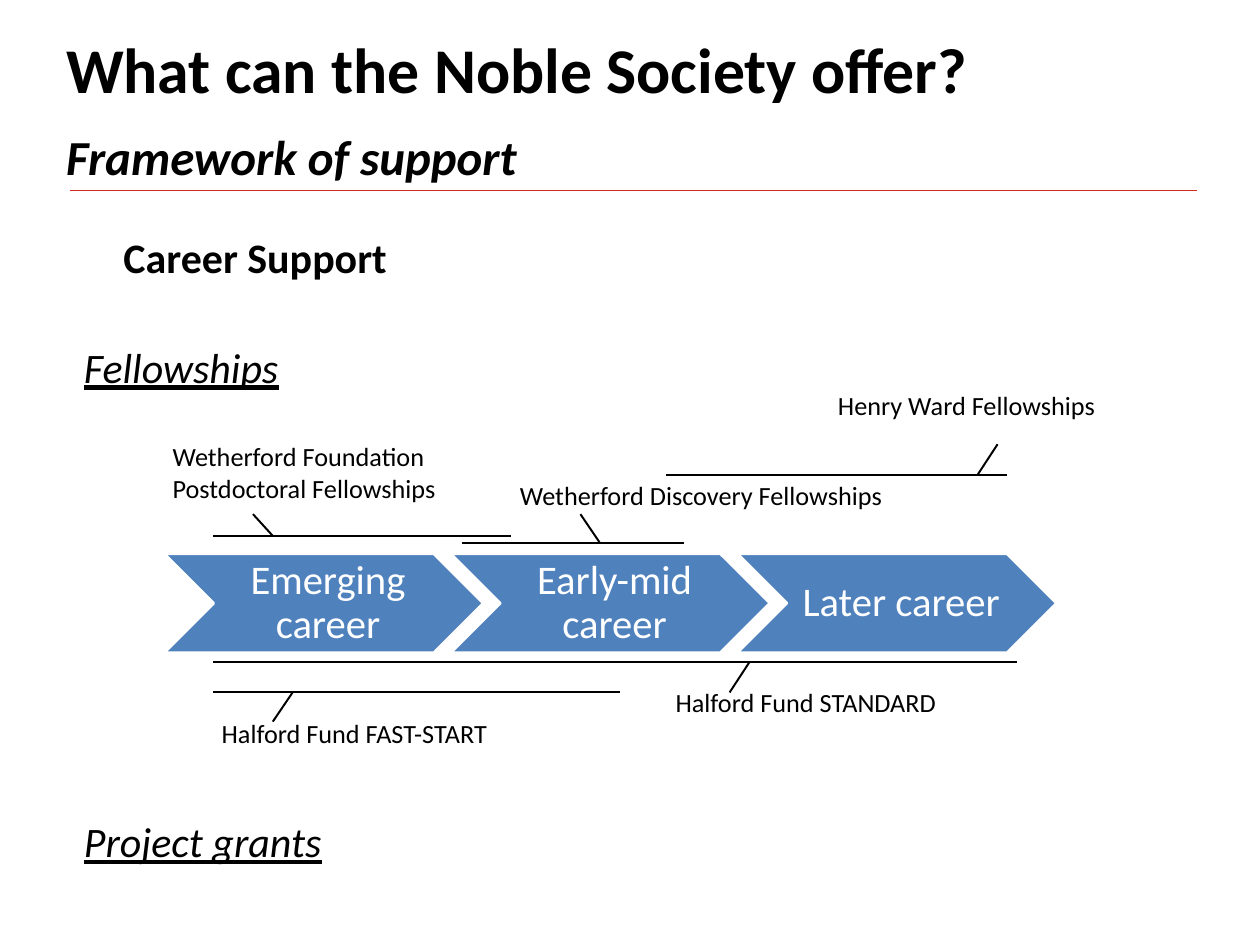
from dataclasses import dataclass

from lxml import etree
from pptx import Presentation
from pptx.dml.color import RGBColor
from pptx.enum.shapes import MSO_CONNECTOR, MSO_SHAPE
from pptx.enum.text import MSO_ANCHOR, PP_ALIGN
from pptx.oxml.ns import qn
from pptx.util import Pt

STRAIGHT = MSO_CONNECTOR.STRAIGHT
CHEVRON = MSO_SHAPE.CHEVRON
TOP, MIDDLE, BOTTOM = MSO_ANCHOR.TOP, MSO_ANCHOR.MIDDLE, MSO_ANCHOR.BOTTOM
LEFT, CENTER = PP_ALIGN.LEFT, PP_ALIGN.CENTER


@dataclass(frozen=True)
class Theme:
    """Colours, font and type sizes of the slide."""
    font: str = "Calibri"
    ink: RGBColor = RGBColor(0, 0, 0)
    white: RGBColor = RGBColor(255, 255, 255)
    blue: RGBColor = RGBColor(0x4F, 0x81, 0xBD)
    red: RGBColor = RGBColor(0xD5, 0x2B, 0x1E)
    title: float = 48.6
    subtitle: float = 37.3
    heading: float = 32
    stage: float = 31
    label: float = 20


THEME = Theme()
POINTER_RUN = 15.1
STAGE_PITCH = 218.6
STAGES = ["Emerging career", "Early-mid career", "Later career"]

# label lines, label box, bar (left, right, y), pointer (foot x, direction, tip y)
SCHEMES = [
    (["Henry Ward Fellowships"], (632.2, 293.8, 237.6, 31.7),
     (508.3, 768.2, 362.2), (745.9, 1, 339.1)),
    (["Halford Fund STANDARD"], (508.3, 520.6, 260, 31.7),
     (162.7, 776.2, 505.4), (571.7, -1, 528.5)),
    (["Wetherford Foundation", "Postdoctoral Fellowships"], (124.6, 332.6, 237.6, 55.4),
     (162.7, 389.5, 409), (208.1, -1, 392.4)),
    (["Halford Fund FAST-START"], (162, 543.6, 270.7, 31.7),
     (162.7, 473, 528.5), (223.2, -1, 550.8)),
    (["Wetherford Discovery Fellowships"], (389.5, 362.2, 315.4, 31.7),
     (352.1, 522, 414.7), (457.9, -1, 392.4)),
]


def set_frame(shape, anchor, insets):
    """Set wrapping, anchor and insets, and return the first paragraph."""
    frame = shape.text_frame
    frame.word_wrap = True
    frame.vertical_anchor = anchor
    frame.margin_left, frame.margin_top, frame.margin_right, frame.margin_bottom = map(Pt, insets)
    return frame.paragraphs[0]


def add_run(paragraph, text, size, color=THEME.ink, bold=False, italic=False, underline=False):
    """Append one formatted run."""
    run = paragraph.add_run()
    run.text = text
    font = run.font
    font.name, font.size, font.color.rgb = THEME.font, Pt(size), color
    font.bold, font.italic, font.underline = bold, italic, underline


def add_text(slide, box, lines, size, anchor=TOP, insets=(7.2, 3.6, 7.2, 3.6), **style):
    """Add a left-aligned text box with line breaks and return its paragraph."""
    shape = slide.shapes.add_textbox(*map(Pt, box))
    paragraph = set_frame(shape, anchor, insets)
    paragraph.alignment = LEFT
    for index, line in enumerate(lines):
        if index:
            paragraph.add_line_break()
        add_run(paragraph, line, size, **style)
    return paragraph


def add_line(slide, start, end, color=THEME.ink, width=1.5):
    """Add a straight line without a shadow."""
    connector = slide.shapes.add_connector(STRAIGHT, *map(Pt, (*start, *end)))
    connector.line.color.rgb = color
    connector.line.width = Pt(width)
    etree.SubElement(connector._element.spPr, qn("a:effectLst"))


def add_title(slide):
    """Add the two-line title above its red rule."""
    add_line(slide, (53.3, 145.4), (913, 145.4), THEME.red, 1)
    paragraph = add_text(slide, (41, 51.8, 865.4, 94.3), ["What can the Noble Society offer?"],
                         THEME.title, BOTTOM, (9.4, 5, 9.4, 5), bold=True)
    paragraph.line_spacing = Pt(60)
    paragraph.add_line_break()
    add_run(paragraph, "Framework of support", THEME.subtitle, bold=True, italic=True)


def add_stage(slide, index, text):
    """Add one chevron of the career path."""
    left = 125.3 + index * STAGE_PITCH
    shape = slide.shapes.add_shape(CHEVRON, Pt(left), Pt(422.6), Pt(243.4), Pt(75.6))
    shape.shadow.inherit = False
    shape.fill.solid()
    shape.fill.fore_color.rgb = THEME.blue
    shape.line.color.rgb = THEME.white
    shape.line.width = Pt(2)
    paragraph = set_frame(shape, MIDDLE, (10, 3.6, 3.6, 3.6))
    paragraph.alignment = CENTER
    paragraph.line_spacing = 0.9
    add_run(paragraph, text, THEME.stage, THEME.white)


def add_scheme(slide, lines, box, bar, pointer):
    """Add a funding scheme: its span bar, pointer and label."""
    left, right, y = bar
    foot, direction, tip_y = pointer
    add_line(slide, (left, y), (right, y))
    add_line(slide, (foot, y), (foot + direction * POINTER_RUN, tip_y))
    add_text(slide, box, lines, THEME.label)


def main():
    """Build and save the slide."""
    presentation = Presentation()
    presentation.slide_width, presentation.slide_height = Pt(961.2), Pt(725.8)
    slide = presentation.slides.add_slide(presentation.slide_layouts[6])
    add_title(slide)
    for index, text in enumerate(STAGES):
        add_stage(slide, index, text)
    add_text(slide, (87.1, 173.5, 605.5, 46), ["Career Support"], THEME.heading, bold=True)
    for scheme in SCHEMES:
        add_scheme(slide, *scheme)
    for text, top, width in [("Fellowships", 257, 170), ("Project grants", 619.2, 203)]:
        add_text(slide, (56.9, top, width, 46), [text], THEME.heading,
                 italic=True, underline=True)
    presentation.save("out.pptx")


if __name__ == "__main__":
    main()
